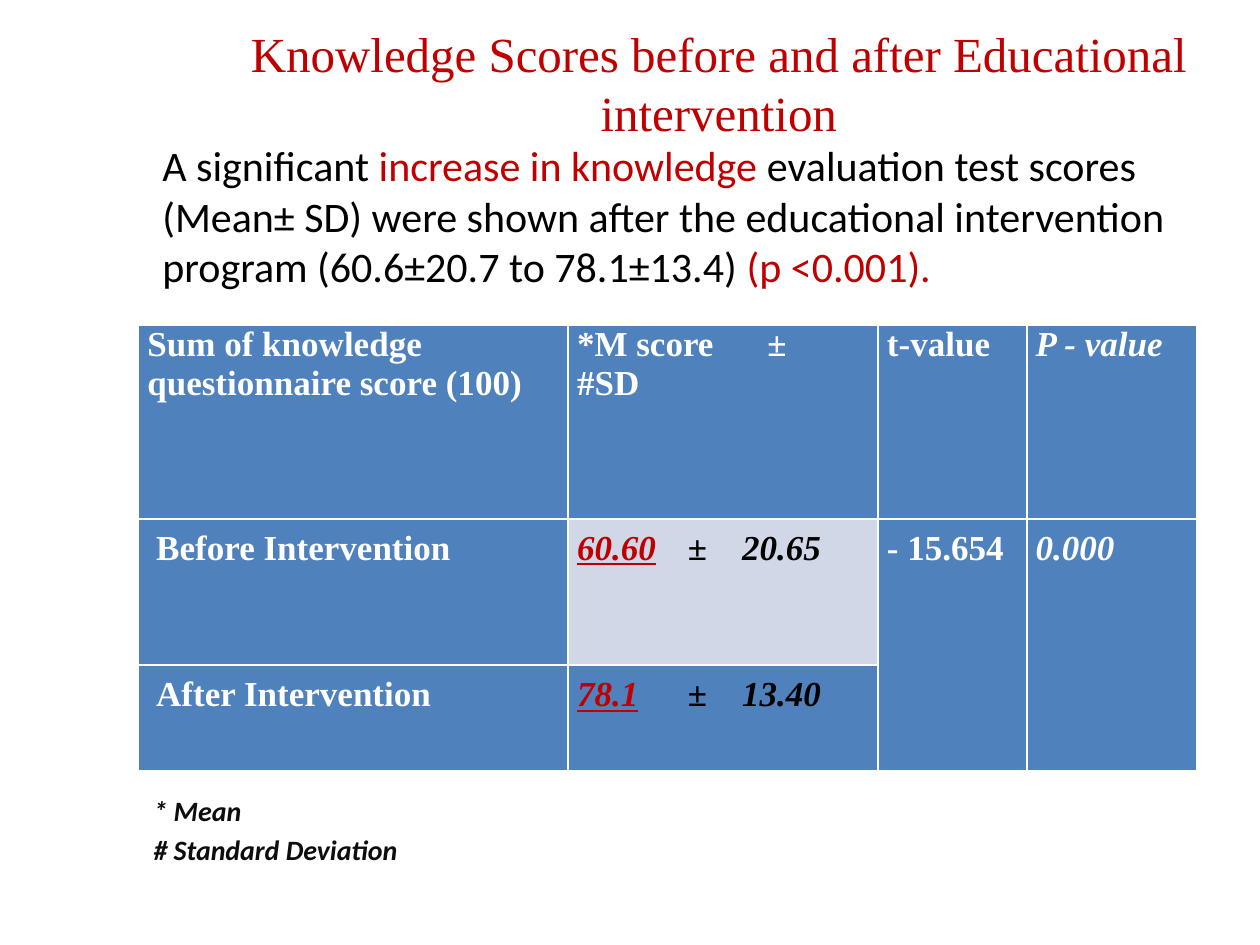
"""Build the slide comparing knowledge scores before and after the intervention."""
from lxml import etree
from pptx import Presentation
from pptx.dml.color import RGBColor
from pptx.enum import text
from pptx.oxml.ns import qn
from pptx.util import Inches, Pt

COLORS = {"red": "C00000", "blue": "4F81BD", "pale": "D0D8E8",
          "white": "FFFFFF", "black": "000000", "ink": "0D0D0D"}
SERIF, SANS = "Times New Roman", "Calibri"

TITLE = [[("Knowledge Scores before and after Educational intervention", "red")]]
SUMMARY = [[
    ("A significant ", "black"),
    ("increase in knowledge ", "red"),
    ("evaluation test scores (Mean± SD) were shown after the educational "
     "intervention program (60.6±20.7 to 78.1±13.4) ", "black"),
    ("(p <0.001).", "red"),
]]
NOTES = [[("* Mean", "ink")], [("# Standard Deviation", "ink")]]

HEADER = ["Sum of knowledge questionnaire score (100)", "*M score\t±\v#SD",
          "t-value", "P - value"]
ROWS = [("Before Intervention", ("60.60", "20.65"), "- 15.654", "0.000"),
        ("After Intervention", ("78.1", "13.40"), "", "")]
COL_WIDTHS = [3.41, 2.46, 1.18, 1.35]
ROW_HEIGHTS = [1.54, 1.16, 0.84]
HEADER_TABS, SCORE_TABS = [1.51], [0.88, 1.31]
LABEL_INDENT = 0.07


def rgb(name):
    return RGBColor.from_string(COLORS[name])


def add_runs(p, runs):
    for content, color in runs:
        r = p.add_run()
        r.text = content
        r.font.color.rgb = rgb(color)


def style(p, name, size, bold=False, italic=False):
    f = p.font
    f.name, f.size, f.bold, f.italic = name, Pt(size), bold, italic


def add_text(s, box, paragraphs, name, size, bold=False, italic=False,
             align=None, anchor=text.MSO_ANCHOR.TOP, gap=0, indent=0):
    tf = s.shapes.add_textbox(*map(Inches, box)).text_frame
    tf.word_wrap, tf.vertical_anchor = True, anchor
    for i, runs in enumerate(paragraphs):
        p = tf.add_paragraph() if i else tf.paragraphs[0]
        add_runs(p, runs)
        p.alignment = align
        if i and gap:
            p.space_before = Pt(gap)
        if indent:
            p._p.get_or_add_pPr().set("marL", str(Inches(indent)))
        style(p, name, size, bold, italic)


def set_tabs(p, stops):
    tabs = etree.SubElement(p._p.get_or_add_pPr(), qn("a:tabLst"))
    for stop in stops:
        etree.SubElement(tabs, qn("a:tab"), pos=str(Inches(stop)), algn="l")


def format_cell(cell, fill):
    cell.margin_left = cell.margin_right = Inches(0.07)
    cell.margin_top = cell.margin_bottom = 0
    tcPr = cell._tc.get_or_add_tcPr()
    for side in "LRTB":
        ln = etree.SubElement(tcPr, qn(f"a:ln{side}"), w=str(Pt(1)))
        color = etree.SubElement(ln, qn("a:solidFill"))
        etree.SubElement(color, qn("a:srgbClr"), val=COLORS["white"])
    cell.fill.solid()
    cell.fill.fore_color.rgb = rgb(fill)


def fill_cell(cell, row, col, value):
    p = cell.text_frame.paragraphs[0]
    is_score = row > 0 and col == 1
    if is_score:
        mean, sd = value
        add_runs(p, [(mean, "red"), (f"\t±\t{sd}", "black")])
        p.runs[0].font.underline = True
    else:
        p.text = value
    if row:
        p.line_spacing = Pt(28)
    if row and col == 0:
        p._p.get_or_add_pPr().set("marL", str(Inches(LABEL_INDENT)))
    if col == 1:
        set_tabs(p, SCORE_TABS if row else HEADER_TABS)
    style(p, SERIF, 20, bold=True, italic=is_score or col == 3)
    p.font.color.rgb = rgb("white")


def add_scores(s):
    size = (sum(COL_WIDTHS), sum(ROW_HEIGHTS))
    table = s.shapes.add_table(3, 4, *map(Inches, (1.1, 2.58, *size))).table
    for column, width in zip(table.columns, COL_WIDTHS):
        column.width = Inches(width)
    for row, height in zip(table.rows, ROW_HEIGHTS):
        row.height = Inches(height)
    for i, values in enumerate([HEADER, *ROWS]):
        for j, value in enumerate(values):
            cell = table.cell(i, j)
            format_cell(cell, "pale" if (i, j) == (1, 1) else "blue")
            if value:
                fill_cell(cell, i, j, value)
    for j in (2, 3):
        table.cell(1, j).merge(table.cell(2, j))


def main():
    prs = Presentation()
    prs.slide_width, prs.slide_height = Inches(10), Inches(7.5)
    s = prs.slides.add_slide(prs.slide_layouts[6])
    add_text(s, (1.28, 0.29, 8.85, 0.73), TITLE, SERIF, 28,
             align=text.PP_ALIGN.CENTER, anchor=text.MSO_ANCHOR.MIDDLE)
    add_text(s, (1.12, 6.25, 3.02, 0.68), NOTES, SANS, 16,
             bold=True, italic=True, gap=3.2)
    add_scores(s)
    add_text(s, (1.1, 1.06, 8.58, 1.31), SUMMARY, SANS, 24, indent=0.09)
    prs.save("out.pptx")


if __name__ == "__main__":
    main()
